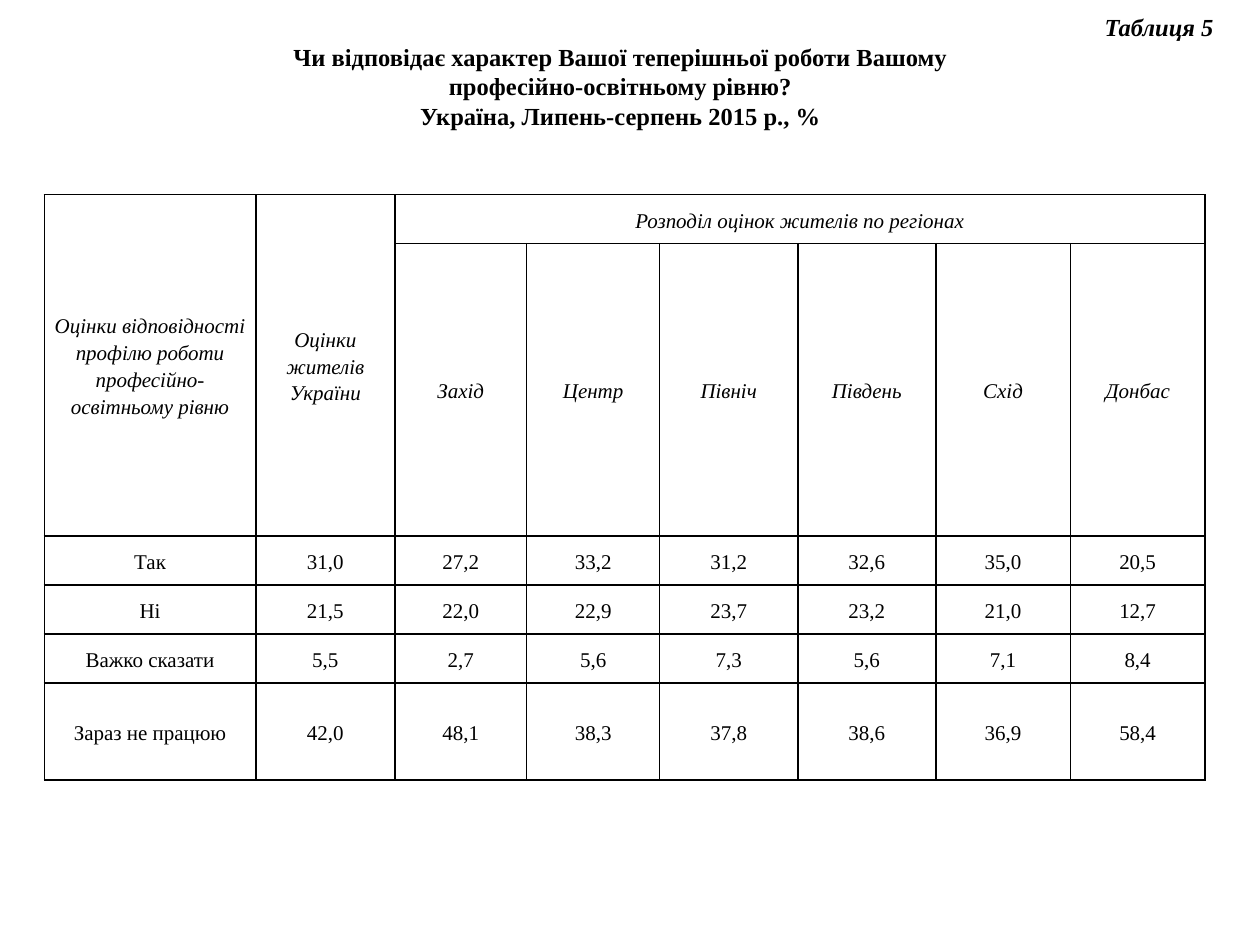
from lxml import etree
from pptx import Presentation
from pptx.dml.color import RGBColor
from pptx.enum.text import MSO_ANCHOR, PP_ALIGN
from pptx.oxml.ns import qn
from pptx.util import Pt

CENTER, RIGHT = PP_ALIGN.CENTER, PP_ALIGN.RIGHT
MIDDLE = MSO_ANCHOR.MIDDLE
FONT = "Times New Roman"
COLORS = {"ink": "000000"}

LABEL = "Таблиця 5"
TITLE = [
    "Чи відповідає характер Вашої теперішньої роботи Вашому",
    "професійно-освітньому рівню?",
    "Україна, Липень-серпень 2015 р., %",
]
ROW_HEAD = "Оцінки відповідності профілю роботи професійно-освітньому рівню"
TOTAL_HEAD = "Оцінки жителів України"
REGIONS_HEAD = "Розподіл оцінок жителів по регіонах"
REGIONS = ["Захід", "Центр", "Північ", "Південь", "Схід", "Донбас"]
ANSWERS = [
    ["Так", "31,0", "27,2", "33,2", "31,2", "32,6", "35,0", "20,5"],
    ["Ні", "21,5", "22,0", "22,9", "23,7", "23,2", "21,0", "12,7"],
    ["Важко сказати", "5,5", "2,7", "5,6", "7,3", "5,6", "7,1", "8,4"],
    ["Зараз не працюю", "42,0", "48,1", "38,3", "37,8", "38,6", "36,9", "58,4"],
]
HEADER_ROWS = [
    [ROW_HEAD, TOTAL_HEAD, REGIONS_HEAD] + [""] * (len(REGIONS) - 1),
    ["", ""] + REGIONS,
]
ROWS = HEADER_ROWS + ANSWERS
COL_WIDTHS = [120.9, 79.4, 75.4, 76, 78.9, 78.9, 76.9, 76.9]
ROW_HEIGHTS = [28, 167, 28, 28, 28, 55.5]


def write(p, text, size=12, bold=False, italic=False, align=CENTER, spacing=1.0):
    p.alignment = align
    p.line_spacing = spacing
    r = p.add_run()
    r.text = text
    r.font.name = FONT
    r.font.size = Pt(size)
    r.font.bold = bold
    r.font.italic = italic
    r.font.color.rgb = RGBColor.from_string(COLORS["ink"])


def set_borders(cell, width=1):
    tc_pr = cell._tc.get_or_add_tcPr()
    for i, side in enumerate(("lnL", "lnR", "lnT", "lnB")):
        ln = etree.Element(qn(f"a:{side}"), w=str(Pt(width)))
        fill = etree.SubElement(ln, qn("a:solidFill"))
        etree.SubElement(fill, qn("a:srgbClr"), val=COLORS["ink"])
        tc_pr.insert(i, ln)


def add_ratings_table(slide):
    frame = slide.shapes.add_table(
        len(ROWS), len(COL_WIDTHS), Pt(25.3), Pt(111.3),
        Pt(sum(COL_WIDTHS)), Pt(sum(ROW_HEIGHTS)))
    table = frame.table
    table.first_row = table.horz_banding = False
    for col, width in zip(table.columns, COL_WIDTHS):
        col.width = Pt(width)
    for row, height in zip(table.rows, ROW_HEIGHTS):
        row.height = Pt(height)

    for c in (0, 1):
        table.cell(0, c).merge(table.cell(1, c))
    table.cell(0, 2).merge(table.cell(0, len(COL_WIDTHS) - 1))

    for r, texts in enumerate(ROWS):
        for c, text in enumerate(texts):
            cell = table.cell(r, c)
            cell.fill.background()
            set_borders(cell)
            cell.vertical_anchor = MIDDLE
            cell.margin_left = cell.margin_right = Pt(5)
            cell.margin_top = cell.margin_bottom = Pt(0)
            if text:
                write(cell.text_frame.paragraphs[0], text,
                      italic=r < len(HEADER_ROWS), spacing=1.15)


def add_heading(slide):
    box = slide.shapes.add_textbox(Pt(8.6), Pt(3.6), Pt(692), Pt(92))
    tf = box.text_frame
    tf.word_wrap = True
    write(tf.paragraphs[0], LABEL, size=14, bold=True, italic=True, align=RIGHT)
    for line in TITLE:
        write(tf.add_paragraph(), line, size=14, bold=True)


def main():
    prs = Presentation()
    prs.slide_width, prs.slide_height = Pt(720), Pt(540)
    slide = prs.slides.add_slide(prs.slide_layouts[6])
    add_ratings_table(slide)
    add_heading(slide)
    prs.save("out.pptx")


if __name__ == "__main__":
    main()
